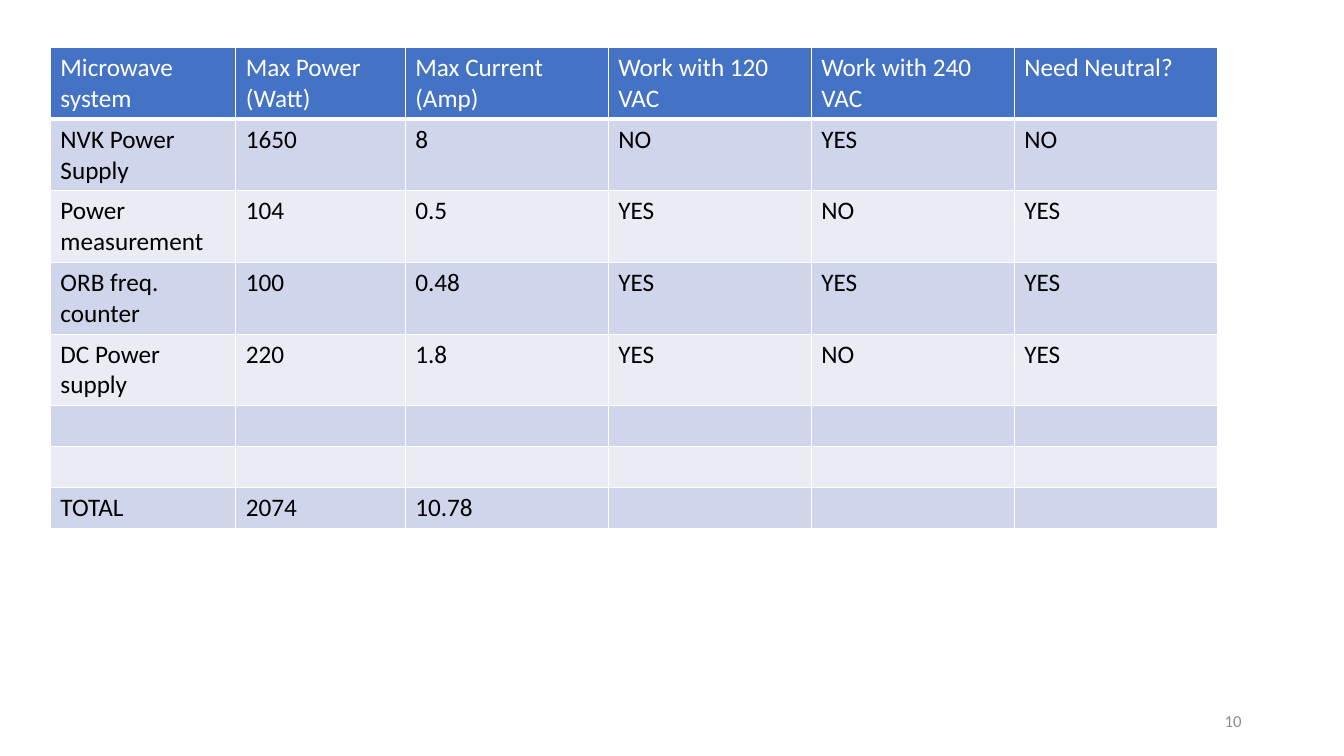
from lxml import etree
from pptx import Presentation
from pptx.dml.color import RGBColor
from pptx.enum.text import MSO_ANCHOR, PP_ALIGN
from pptx.oxml.ns import qn
from pptx.util import Pt

LEFT, RIGHT = PP_ALIGN.LEFT, PP_ALIGN.RIGHT
MIDDLE = MSO_ANCHOR.MIDDLE

WHITE = RGBColor(0xFF, 0xFF, 0xFF)
BLACK = RGBColor(0x00, 0x00, 0x00)
BLUE = RGBColor(0x44, 0x72, 0xC4)
BANDS = (RGBColor(0xE9, 0xEB, 0xF5), RGBColor(0xCF, 0xD5, 0xEA))
GRAY = RGBColor(0x8C, 0x8C, 0x8C)

WIDTHS = [132.5, 121] + [145] * 4
ROW_H = 29.2
ROWS = [
    ("Microwave system", "Max Power (Watt)", "Max Current (Amp)",
     "Work with 120 VAC", "Work with 240 VAC", "Need Neutral?"),
    ("NVK Power Supply", "1650", "8", "NO", "YES", "NO"),
    ("Power measurement", "104", "0.5", "YES", "NO", "YES"),
    ("ORB freq. counter", "100", "0.48", "YES", "YES", "YES"),
    ("DC Power supply", "220", "1.8", "YES", "NO", "YES"),
    (),
    (),
    ("TOTAL", "2074", "10.78"),
]


def write(frame, text, size=18, color=BLACK, align=LEFT, font="Calibri"):
    par = frame.paragraphs[0]
    par.alignment = align
    run = par.add_run()
    run.text = text
    run.font.name = font
    run.font.size = Pt(size)
    run.font.bold = False
    run.font.color.rgb = color


class Page:
    def __init__(self, slide, line=WHITE):
        self.slide = slide
        self.line = line

    def border(self, cell, base):
        props = cell._tc.get_or_add_tcPr()
        for side, width in (("L", 1), ("R", 1), ("T", 1), ("B", base)):
            edge = etree.SubElement(props, qn("a:ln" + side), w=str(Pt(width)))
            fill = etree.SubElement(edge, qn("a:solidFill"))
            etree.SubElement(fill, qn("a:srgbClr"), val=str(self.line))

    def table(self, left, top, widths, rows, height):
        grid = self.slide.shapes.add_table(
            len(rows), len(widths), Pt(left), Pt(top),
            Pt(sum(widths)), Pt(height * len(rows))).table
        for col, width in zip(grid.columns, widths):
            col.width = Pt(width)
        for r, texts in enumerate(rows):
            grid.rows[r].height = Pt(height)
            head = r == 0
            for c, cell in enumerate(grid.rows[r].cells):
                self.border(cell, 3 if head else 1)
                cell.fill.solid()
                cell.fill.fore_color.rgb = BLUE if head else BANDS[r % 2]
                if c < len(texts):
                    write(cell.text_frame, texts[c],
                          color=WHITE if head else BLACK)

    def label(self, left, top, width, height, text, **style):
        box = self.slide.shapes.add_textbox(
            Pt(left), Pt(top), Pt(width), Pt(height))
        box.text_frame.word_wrap = True
        box.text_frame.vertical_anchor = MIDDLE
        write(box.text_frame, text, **style)


def main():
    deck = Presentation()
    deck.slide_width, deck.slide_height = Pt(960), Pt(540)
    page = Page(deck.slides.add_slide(deck.slide_layouts[6]))

    # Power needs of each device
    page.table(36, 34, WIDTHS, ROWS, ROW_H)

    # Page number
    page.label(678, 500.5, 216, 28.8, "10", size=12, color=GRAY, align=RIGHT)

    deck.save("out.pptx")


if __name__ == "__main__":
    main()
